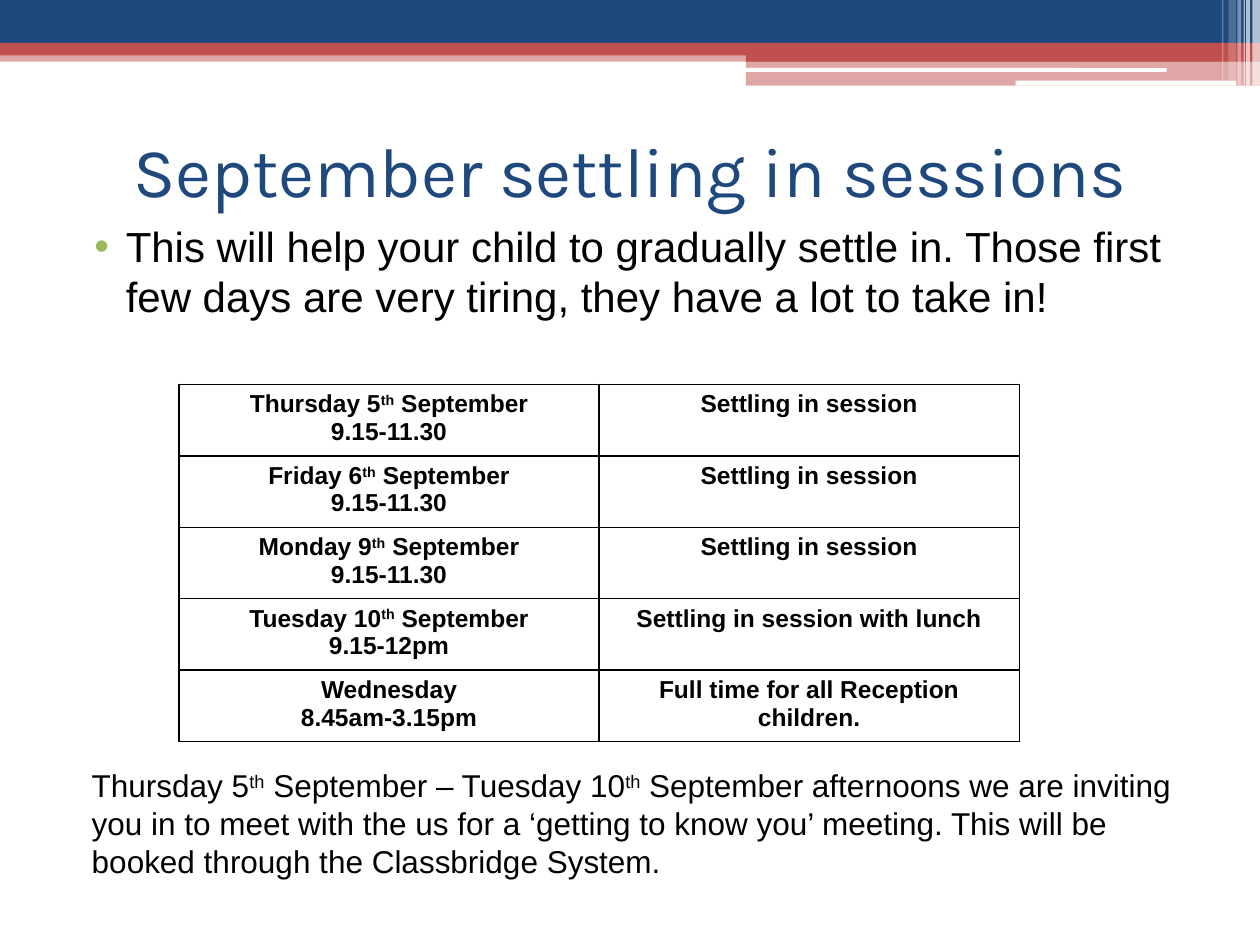
from dataclasses import dataclass

from lxml import etree
from pptx import Presentation
from pptx.dml.color import RGBColor
from pptx.enum.shapes import MSO_SHAPE
from pptx.enum.text import MSO_ANCHOR, PP_ALIGN
from pptx.oxml.ns import qn
from pptx.util import Inches, Pt

RECT = MSO_SHAPE.RECTANGLE
ROUNDED = MSO_SHAPE.ROUNDED_RECTANGLE
CENTER = PP_ALIGN.CENTER
LEFT = PP_ALIGN.LEFT
TOP = MSO_ANCHOR.TOP
MIDDLE = MSO_ANCHOR.MIDDLE


@dataclass(frozen=True)
class Theme:
    navy: str = "1F497D"
    red: str = "C0504D"
    green: str = "9BBB59"
    white: str = "FFFFFF"
    black: str = "000000"
    title_font: str = "Karla"
    body_font: str = "Arial"
    title_size: int = 40
    body_size: int = 24
    note_size: int = 18
    table_size: int = 14


THEME = Theme()

# left, top, width, height, colour, opacity in percent
HEADER_BANDS = [
    (0, 0.4, 10, 0.09, THEME.red, 50),
    (0, 0, 10, 0.34, THEME.navy, 100),
    (0, 0.34, 10, 0.1, THEME.red, 100),
    (5.92, 0.39, 4.08, 0.1, THEME.red, 100),
    (5.92, 0.48, 4.08, 0.2, THEME.red, 50),
]
WHITE_BARS = [(5.91, 0.54, 3.35, 0.03), (8.06, 0.64, 1.75, 0.04)]
# left, width, height, opacity in percent
CORNER_STRIPES = [
    (9.94, 0.06, 0.68, 65),
    (9.89, 0.03, 0.68, 65),
    (9.87, 0.01, 0.68, 60),
    (9.82, 0.03, 0.68, 40),
    (9.75, 0.06, 0.64, 20),
    (9.7, 0.01, 0.64, 30),
]

# "^" marks the switch into and out of superscript
SESSIONS = [
    ("Thursday 5^th^ September", "9.15-11.30", "Settling in session"),
    ("Friday 6^th^ September", "9.15-11.30", "Settling in session"),
    ("Monday 9^th^ September", "9.15-11.30", "Settling in session"),
    ("Tuesday 10^th^ September", "9.15-12pm", "Settling in session with lunch"),
    ("Wednesday", "8.45am-3.15pm", "Full time for all Reception children."),
]
INTRO = ("This will help your child to gradually settle in. Those first few "
         "days are very tiring, they have a lot to take in!")
MEETING_NOTE = ("Thursday 5^th^ September – Tuesday 10^th^ September afternoons "
                "we are inviting you in to meet with the us for a ‘getting to "
                "know you’ meeting. This will be booked through the Classbridge "
                "System.")


def add_band(slide, left, top, width, height, color, opacity=100, kind=RECT):
    band = slide.shapes.add_shape(
        kind, Inches(left), Inches(top), Inches(width), Inches(height))
    band.shadow.inherit = False
    band.line.fill.background()
    band.fill.solid()
    band.fill.fore_color.rgb = RGBColor.from_string(color)
    if opacity < 100:
        color_node = band.fill._xPr.find(".//" + qn("a:srgbClr"))
        etree.SubElement(color_node, qn("a:alpha"), val=str(opacity * 1000))


def add_runs(paragraph, text, size, font=THEME.body_font, color=THEME.black,
             bold=False):
    for index, part in enumerate(text.split("^")):
        run = paragraph.add_run()
        run.text = part
        run.font.size = Pt(size)
        run.font.name = font
        run.font.bold = bold
        run.font.color.rgb = RGBColor.from_string(color)
        if index % 2:
            run.font._element.set("baseline", "30000")


def add_text(slide, left, top, width, height, text, size, anchor=TOP,
             align=LEFT, **style):
    box = slide.shapes.add_textbox(
        Inches(left), Inches(top), Inches(width), Inches(height))
    frame = box.text_frame
    frame.word_wrap = True
    frame.vertical_anchor = anchor
    paragraph = frame.paragraphs[0]
    paragraph.alignment = align
    add_runs(paragraph, text, size, **style)
    return paragraph


def add_bullet(paragraph, color):
    props = paragraph._p.get_or_add_pPr()
    props.set("marL", str(Inches(0.4)))
    props.set("indent", str(Inches(-0.25)))
    bullet_color = etree.SubElement(props, qn("a:buClr"))
    etree.SubElement(bullet_color, qn("a:srgbClr"), val=color)
    etree.SubElement(props, qn("a:buFont"), typeface=THEME.body_font)
    etree.SubElement(props, qn("a:buChar"), char="•")


def add_borders(cell, color):
    props = cell._tc.get_or_add_tcPr()
    for position, side in enumerate(("lnL", "lnR", "lnT", "lnB")):
        border = etree.Element(qn("a:" + side), w=str(Pt(1)))
        fill = etree.SubElement(border, qn("a:solidFill"))
        etree.SubElement(fill, qn("a:srgbClr"), val=color)
        props.insert(position, border)


def fill_cell(cell, lines):
    cell.fill.background()
    add_borders(cell, THEME.black)
    frame = cell.text_frame
    for index, line in enumerate(lines):
        paragraph = frame.add_paragraph() if index else frame.paragraphs[0]
        paragraph.alignment = CENTER
        add_runs(paragraph, line, THEME.table_size, bold=True)


def add_sessions_table(slide):
    table = slide.shapes.add_table(
        len(SESSIONS), 2, Inches(1.42), Inches(3.05),
        Inches(6.67), Inches(2.83)).table
    table.first_row = False
    table.horz_banding = False
    for row, (day, time, activity) in enumerate(SESSIONS):
        fill_cell(table.cell(row, 0), [day, time])
        fill_cell(table.cell(row, 1), [activity])


def add_header(slide):
    for band in HEADER_BANDS:
        add_band(slide, *band)
    for bar in WHITE_BARS:
        add_band(slide, *bar, THEME.white, kind=ROUNDED)
    for left, width, height, opacity in CORNER_STRIPES:
        add_band(slide, left, 0, width, height, THEME.white, opacity)


def main():
    deck = Presentation()
    deck.slide_width, deck.slide_height = Inches(10), Inches(7.5)
    slide = deck.slides.add_slide(deck.slide_layouts[6])

    add_header(slide)

    # Title and introduction
    add_text(slide, 0.27, 0.76, 9.46, 1.17, "September settling in sessions",
             THEME.title_size, MIDDLE, CENTER,
             font=THEME.title_font, color=THEME.navy)
    intro = add_text(slide, 0.5, 1.7, 9, 5.25, INTRO, THEME.body_size)
    add_bullet(intro, THEME.green)

    # Meeting note and timetable
    add_text(slide, 0.63, 6.03, 9.1, 1.31, MEETING_NOTE, THEME.note_size)
    add_sessions_table(slide)

    deck.save("out.pptx")


if __name__ == "__main__":
    main()
